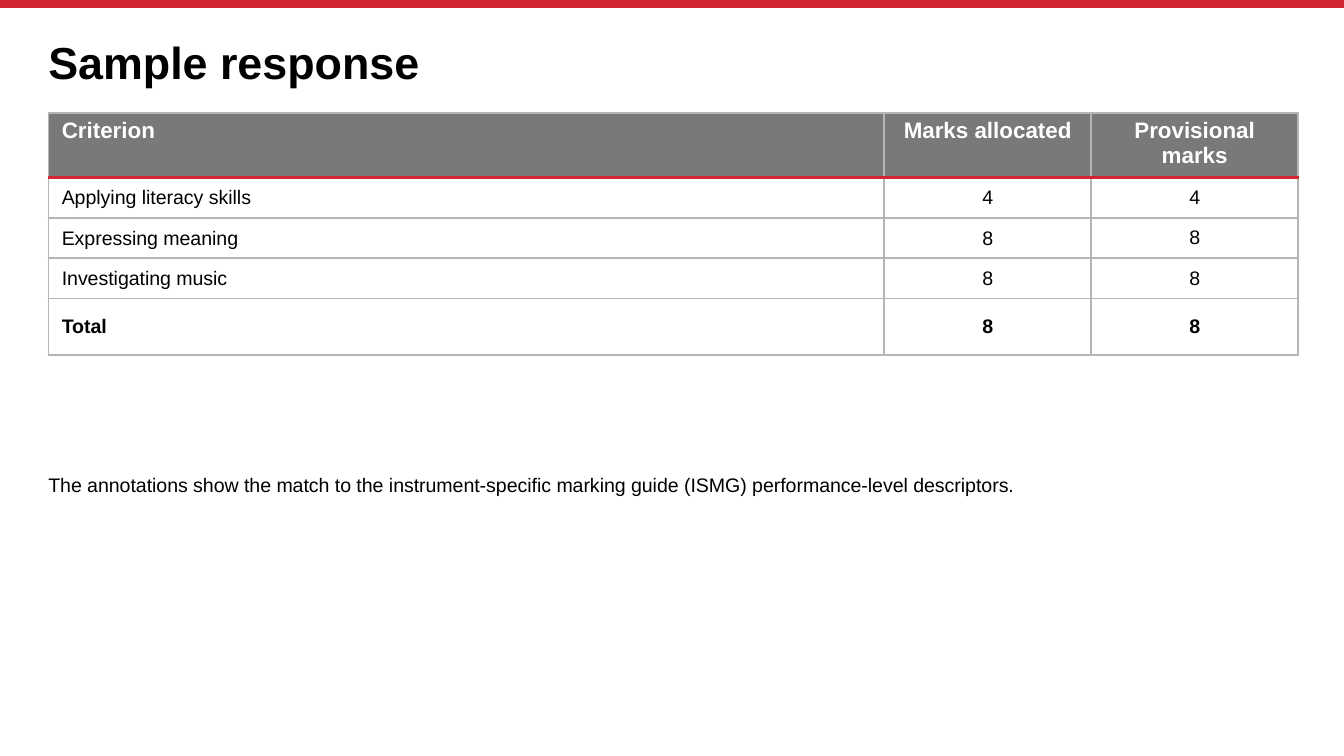
from pptx import Presentation
from pptx.dml.color import RGBColor
from pptx.enum.shapes import MSO_CONNECTOR as Connector
from pptx.enum.text import MSO_ANCHOR as Anchor, PP_ALIGN as Align
from pptx.oxml.ns import qn
from pptx.util import Inches, Pt
from lxml.etree import SubElement

TITLE = "Sample response"
NOTE = ("The annotations show the match to the instrument-specific marking guide "
        "(ISMG) performance-level descriptors.")
ROWS = [
    ("Criterion", "Marks allocated", "Provisional marks"),
    ("Applying literacy skills", "4", "4"),
    ("Expressing meaning", "8", "8"),
    ("Investigating music", "8", "8"),
    ("Total", "8", "8"),
]
COLUMN_WIDTHS = [6.22, 1.54, 1.54]
ROW_HEIGHTS = [0.32, 0.3, 0.3, 0.3, 0.42]
LEFT, WIDTH = 0.36, 9.29
TABLE_TOP, TABLE_HEIGHT = 0.84, 1.81
RED, GREY, HEADER_FILL = "D22730", "B5B5B5", "797979"
BLACK, WHITE = "000000", "FFFFFF"


def color(value):
    return RGBColor.from_string(value)


def write(frame, text, size=10.5, ink=BLACK, bold=False, align=Align.LEFT, spacing=1.0):
    frame.word_wrap = True
    paragraph = frame.paragraphs[0]
    paragraph.alignment = align
    paragraph.line_spacing = spacing
    run = paragraph.add_run()
    run.text = text
    run.font.name = "Arial"
    run.font.size = Pt(size)
    run.font.bold = bold
    run.font.color.rgb = color(ink)


def add_text(slide, text, top, height, **style):
    box = slide.shapes.add_textbox(Inches(LEFT), Inches(top), Inches(WIDTH), Inches(height))
    frame = box.text_frame
    frame.margin_left = frame.margin_top = frame.margin_right = frame.margin_bottom = 0
    frame.vertical_anchor = Anchor.TOP
    write(frame, text, **style)


def set_borders(cell, top, bottom):
    properties = cell._tc.get_or_add_tcPr()
    sides = [("lnL", GREY, 1), ("lnR", GREY, 1), ("lnT", *top), ("lnB", *bottom)]
    for position, (tag, value, width) in enumerate(sides):
        line = SubElement(properties, qn(f"a:{tag}"), w=str(Pt(width)))
        fill = SubElement(line, qn("a:solidFill"))
        SubElement(fill, qn("a:srgbClr"), val=value)
        properties.insert(position, line)


def add_marks_table(slide):
    frame = slide.shapes.add_table(
        len(ROWS), len(COLUMN_WIDTHS), Inches(LEFT), Inches(TABLE_TOP),
        Inches(WIDTH), Inches(TABLE_HEIGHT))
    table = frame.table
    table.horz_banding = False
    for column, width in zip(table.columns, COLUMN_WIDTHS):
        column.width = Inches(width)
    for index, height in enumerate(ROW_HEIGHTS):
        table.rows[index].height = Inches(height)
        header = index == 0
        for column, text in enumerate(ROWS[index]):
            cell = table.cell(index, column)
            cell.margin_left = cell.margin_right = Inches(0.1)
            cell.margin_top = cell.margin_bottom = Inches(0.04)
            cell.vertical_anchor = Anchor.TOP if header else Anchor.MIDDLE
            if header:
                cell.fill.solid()
                cell.fill.fore_color.rgb = color(HEADER_FILL)
            else:
                cell.fill.background()
            write(cell.text_frame, text,
                  size=12 if header else 10.5,
                  ink=WHITE if header else BLACK,
                  bold=header or index == len(ROWS) - 1,
                  align=Align.CENTER if column else Align.LEFT,
                  spacing=1.0 if header or column == 2 else 1.05)
            set_borders(cell,
                        top=(RED, 1.5) if index == 1 else (GREY, 1),
                        bottom=(RED, 1.5) if header else (GREY, 1))
    frame.height = Inches(TABLE_HEIGHT)


def main():
    presentation = Presentation()
    presentation.slide_width = Inches(10)
    presentation.slide_height = Inches(10) * 9 // 16
    slide = presentation.slides.add_slide(presentation.slide_layouts[6])

    bar = slide.shapes.add_connector(
        Connector.STRAIGHT, 0, Inches(0.03), Inches(10), Inches(0.03))
    bar.line.color.rgb = color(RED)
    bar.line.width = Pt(4.2)
    SubElement(bar._element.spPr, qn("a:effectLst"))

    add_text(slide, TITLE, 0.3, 0.39, size=24, bold=True, spacing=0.9)
    add_text(slide, NOTE, 3.52, 1.1)
    add_marks_table(slide)
    presentation.save("out.pptx")


if __name__ == "__main__":
    main()
